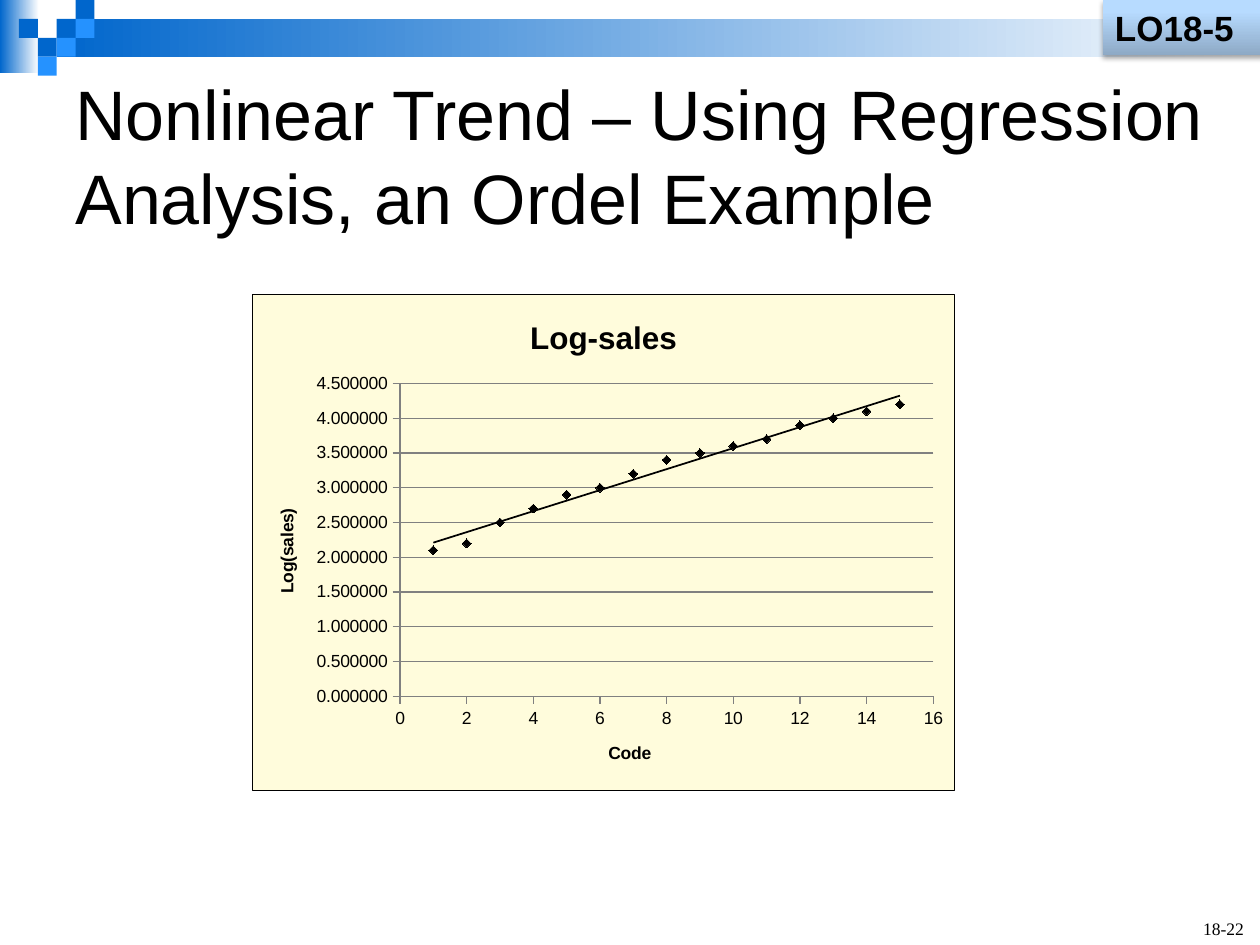
from dataclasses import dataclass

from lxml.etree import SubElement
from pptx import Presentation
from pptx.chart.data import XyChartData
from pptx.dml.color import RGBColor
from pptx.enum.chart import XL_CHART_TYPE, XL_MARKER_STYLE, XL_TICK_MARK
from pptx.enum.shapes import MSO_SHAPE
from pptx.enum.text import MSO_ANCHOR, PP_ALIGN
from pptx.oxml import parse_xml
from pptx.oxml.ns import nsdecls, qn
from pptx.util import Inches, Pt

CELL = 0.15  # side of one square in the corner mosaic, inches


@dataclass(frozen=True)
class Theme:
    font: str = "Arial"
    number_font: str = "Times New Roman"
    ink: str = "000000"
    white: str = "FFFFFF"
    blue: str = "0066CC"
    bright_blue: str = "2592FF"
    cream: str = "FFFCDC"
    grid: str = "808080"
    tag_stops: tuple = ((0, "8DA9C5"), (80, "B7DBFF"), (100, "B9DCFF"))
    title_size: int = 40
    tag_size: int = 20
    chart_title_size: int = 18
    small_size: int = 10


THEME = Theme()


def color(value):
    return RGBColor.from_string(value)


def style_font(font, size, name=THEME.font, bold=False):
    font.size, font.name, font.bold = Pt(size), name, bold
    font.color.rgb = color(THEME.ink)


def set_text(shape, text, *, size, font=THEME.font, bold=False,
             align=PP_ALIGN.LEFT, anchor=MSO_ANCHOR.TOP, line=None, bottom=0.05):
    frame = shape.text_frame
    frame.word_wrap = True
    frame.vertical_anchor = anchor
    frame.margin_bottom = Inches(bottom)
    paragraph = frame.paragraphs[0]
    paragraph.alignment = align
    if line:
        paragraph.line_spacing = Pt(line)
    run = paragraph.add_run()
    run.text = text
    style_font(run.font, size, font, bold)


def add_text(slide, box, text, **options):
    shape = slide.shapes.add_textbox(*map(Inches, box))
    set_text(shape, text, **options)


def add_block(slide, box, fill=None, stops=None, angle=0):
    """Borderless rectangle with a solid fill or gradient stops."""
    shape = slide.shapes.add_shape(MSO_SHAPE.RECTANGLE, *map(Inches, box))
    shape.shadow.inherit = False
    shape.line.fill.background()
    if stops is None:
        shape.fill.solid()
        shape.fill.fore_color.rgb = color(fill)
        return shape
    marks = "".join(f'<a:gs pos="{position * 1000}"><a:srgbClr val="{value}"/></a:gs>'
                    for position, value in stops)
    gradient = parse_xml(f'<a:gradFill {nsdecls("a")} rotWithShape="1"><a:gsLst>{marks}'
                         f'</a:gsLst><a:lin ang="{angle * 60000}" scaled="0"/></a:gradFill>')
    shape.element.spPr.find(qn("a:prstGeom")).addnext(gradient)
    return shape


def add_shadow(shape, blur, distance, opacity):
    effects = shape.element.spPr.find(qn("a:effectLst"))
    effects.append(parse_xml(
        f'<a:outerShdw {nsdecls("a")} blurRad="{Pt(blur)}" dist="{Pt(distance)}" '
        f'dir="5400000" rotWithShape="0"><a:srgbClr val="{THEME.ink}">'
        f'<a:alpha val="{opacity * 1000}"/></a:srgbClr></a:outerShdw>'))


def add_header(slide):
    fade = ((0, THEME.blue), (100, THEME.white))
    add_block(slide, (0, 0, 0.31, 0.58), stops=fade)
    add_block(slide, (3 * CELL, CELL, 10 - 3 * CELL, 2 * CELL), stops=fade)
    # Mosaic squares as (column, row)
    mosaic = {THEME.blue: ((3, 1), (4, 0), (2, 2), (1, 1)),
              THEME.bright_blue: ((4, 1), (3, 2), (2, 3))}
    for fill, cells in mosaic.items():
        for column, row in cells:
            add_block(slide, (column * CELL, row * CELL, CELL, CELL), fill)


def add_tag(slide, text):
    tag = add_block(slide, (8.75, 0, 1.28, 0.44), stops=THEME.tag_stops, angle=270)
    add_shadow(tag, blur=3.1, distance=1.8, opacity=35)
    set_text(tag, text, size=THEME.tag_size, bold=True)


def set_chart_title(owner, text, size):
    frame = (owner.chart_title if hasattr(owner, "chart_title") else owner.axis_title).text_frame
    frame.text = text
    style_font(frame.paragraphs[0].runs[0].font, size, bold=True)


def style_axis(axis, title, maximum, step, number_format):
    axis.minimum_scale, axis.maximum_scale, axis.major_unit = 0, maximum, step
    axis.major_tick_mark, axis.minor_tick_mark = XL_TICK_MARK.OUTSIDE, XL_TICK_MARK.NONE
    axis.tick_labels.number_format = number_format
    axis.tick_labels.number_format_is_linked = False
    axis.format.line.color.rgb = color(THEME.grid)
    set_chart_title(axis, title, THEME.small_size)


def shape_properties(line_color):
    return (f'<c:spPr><a:solidFill><a:srgbClr val="{THEME.cream}"/></a:solidFill><a:ln w="9525">'
            + (f'<a:solidFill><a:srgbClr val="{line_color}"/></a:solidFill>'
               if line_color else '<a:noFill/>') + '</a:ln></c:spPr>')


def with_namespaces(xml):
    tag, rest = xml.split(">", 1)
    return parse_xml(f'{tag} {nsdecls("c", "a")}>{rest}')


def add_trend_line(series):
    trend = with_namespaces(
        f'<c:trendline><c:spPr><a:ln w="12700"><a:solidFill><a:srgbClr val="{THEME.ink}"/>'
        '</a:solidFill></a:ln></c:spPr><c:trendlineType val="linear"/>'
        '<c:dispRSqr val="0"/><c:dispEq val="0"/></c:trendline>')
    series.find(qn("c:xVal")).addprevious(trend)


def place_plot(plot_area, **shares):
    """Fix the inner plot as shares of the chart's size."""
    for old in plot_area.findall(qn("c:layout")):
        plot_area.remove(old)
    layout = with_namespaces("<c:layout></c:layout>")
    manual = SubElement(layout, qn("c:manualLayout"))
    settings = {"layoutTarget": "inner", "xMode": "edge", "yMode": "edge", **shares}
    for name, value in settings.items():
        SubElement(manual, qn(f"c:{name}")).set("val", str(value))
    plot_area.insert(0, layout)


def add_sales_chart(slide, box, log_sales):
    data = XyChartData()
    points = data.add_series("Log-sales")
    for code, value in enumerate(log_sales, start=1):
        points.add_data_point(code, value)
    chart = slide.shapes.add_chart(XL_CHART_TYPE.XY_SCATTER, *map(Inches, box), data).chart
    chart.has_legend = False
    style_font(chart.font, THEME.small_size)
    set_chart_title(chart, "Log-sales", THEME.chart_title_size)
    style_axis(chart.category_axis, "Code", 16, 2, "General")
    style_axis(chart.value_axis, "Log(sales)", 4.5, 0.5, "0.000000")
    chart.category_axis.has_major_gridlines = False
    chart.value_axis.major_gridlines.format.line.color.rgb = color(THEME.grid)

    # Markers and trend line
    chart.plots[0].vary_by_categories = False
    series = chart.plots[0].series[0]
    series.format.line.fill.background()
    series.smooth = False
    marker = series.marker
    marker.style, marker.size = XL_MARKER_STYLE.DIAMOND, 5
    marker.format.fill.solid()
    marker.format.fill.fore_color.rgb = color(THEME.ink)
    marker.format.line.color.rgb = color(THEME.ink)
    add_trend_line(series._element)

    # Backgrounds and border
    plot_area = chart.element.chart.plotArea
    place_plot(plot_area, x=0.21, y=0.18, w=0.76, h=0.63)
    plot_area.append(with_namespaces(shape_properties(None)))
    chart.element.chart.addnext(with_namespaces(shape_properties(THEME.ink)))


def main():
    presentation = Presentation()
    presentation.slide_width, presentation.slide_height = Inches(10), Inches(7.5)
    slide = presentation.slides.add_slide(presentation.slide_layouts[6])
    add_header(slide)
    add_text(slide, (7.33, 7.12, 2.64, 0.38), "18-22", size=THEME.small_size,
             font=THEME.number_font, align=PP_ALIGN.RIGHT, anchor=MSO_ANCHOR.BOTTOM)
    add_text(slide, (0.5, 0.81, 9.42, 1.5),
             "Nonlinear Trend – Using Regression Analysis, an Ordel Example",
             size=THEME.title_size, anchor=MSO_ANCHOR.MIDDLE, line=48, bottom=0.72)
    add_tag(slide, "LO18-5")
    add_sales_chart(slide, (2, 2.33, 5.58, 3.95),
                    (2.1, 2.2, 2.5, 2.7, 2.9, 3, 3.2, 3.4, 3.5, 3.6, 3.7, 3.9, 4, 4.1, 4.2))
    presentation.save("out.pptx")


if __name__ == "__main__":
    main()
